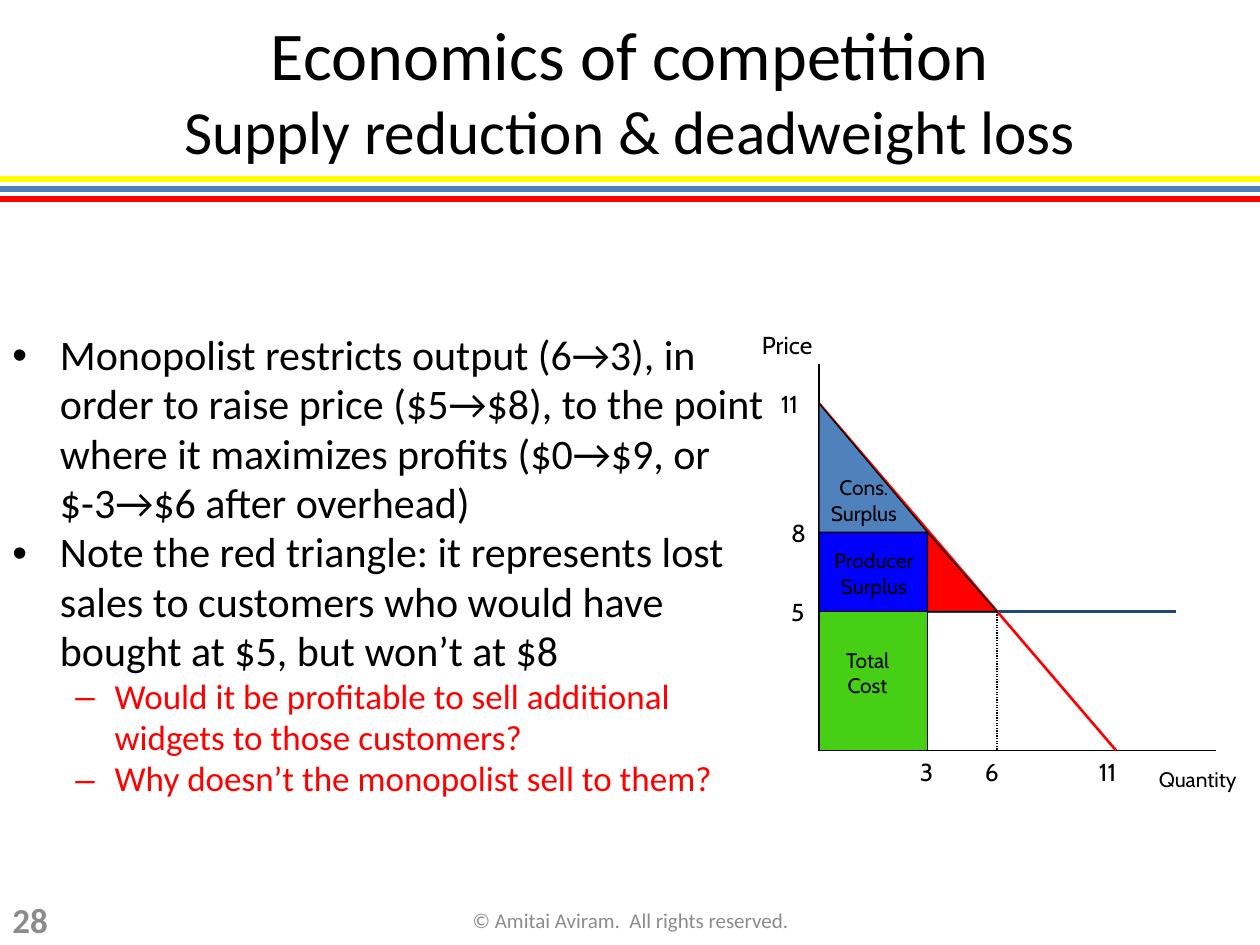
"""Build the slide on supply reduction and deadweight loss."""
from lxml.etree import SubElement
from pptx import Presentation
from pptx.dml.color import RGBColor
from pptx.enum.dml import MSO_LINE
from pptx.enum.shapes import MSO_CONNECTOR, MSO_SHAPE
from pptx.enum.text import MSO_ANCHOR, PP_ALIGN
from pptx.oxml.ns import qn
from pptx.util import Cm, Pt

BLACK = RGBColor(0x00, 0x00, 0x00)
RED = RGBColor(0xFF, 0x00, 0x00)
YELLOW = RGBColor(0xFF, 0xFF, 0x00)
STEEL = RGBColor(0x4B, 0x7E, 0xBC)
NAVY = RGBColor(0x1F, 0x49, 0x7D)
SKY = RGBColor(0x4F, 0x81, 0xBD)
BLUE = RGBColor(0x00, 0x00, 0xFF)
GREEN = RGBColor(0x46, 0xCF, 0x15)
GRAY = RGBColor(0x8C, 0x8C, 0x8C)

WIDTH, HEIGHT = 25.4, 19.05
TITLE_LINES = [("Economics of competition", 39), ("Supply reduction & deadweight loss", 35)]
RULES = [(3.61, YELLOW), (3.81, STEEL), (4.01, RED)]
POINTS = [
    (0, "Monopolist restricts output (6→3), in order to raise price ($5→$8), to the point "
        "where it maximizes profits ($0→$9, or $-3→$6 after overhead)"),
    (0, "Note the red triangle: it represents lost sales to customers who would have "
        "bought at $5, but won’t at $8"),
    (1, "Would it be profitable to sell additional widgets to those customers?"),
    (1, "Why doesn’t the monopolist sell to them?"),
]
LEVELS = [
    {"bullet": "•", "left": 0.96, "hang": 0.96, "size": 24, "color": BLACK},
    {"bullet": "–", "left": 2.06, "hang": 0.79, "size": 20, "color": RED},
]

QUANTITY = {0: 16.51, 3: 18.7, 6: 20.1, 11: 22.5}
PRICE = {0: 15.13, 5: 12.33, 8: 10.73, 11: 8.13}
AXIS_TOP, AXIS_RIGHT, COST_RIGHT = 7.34, 24.51, 23.7
LABEL_HEIGHT = 0.84
PRICE_TICKS = [(5, 15.7, 0.81), (8, 15.7, 0.81), (11, 15.49, 1.19)]
QUANTITY_TICKS = [(3, 0.81), (6, 0.99), (11, 1.19)]
AXIS_NAMES = [("Price", (15.11, 6.53, 1.6, LABEL_HEIGHT), 14),
              ("Quantity", (23.11, 15.32, 2.21, 0.76), 12)]
AREAS = [
    (MSO_SHAPE.RECTANGLE, (0, 3), (8, 5), BLUE, "Producer Surplus", (16.51, 10.92, 2.21, 1.27)),
    (MSO_SHAPE.RECTANGLE, (0, 3), (5, 0), GREEN, "Total Cost", (16.69, 12.93, 1.6, 1.27)),
    (MSO_SHAPE.RIGHT_TRIANGLE, (3, 6), (8, 5), RED, None, None),
    (MSO_SHAPE.RIGHT_TRIANGLE, (0, 3), (11, 8), SKY, "Cons. Surplus", (16.31, 9.45, 2.21, 1.27)),
]
FOOTERS = [
    ("© Amitai Aviram.  All rights reserved.", (8.69, 18.03, 8.05, 1.02),
     {"size": Pt(12)}, PP_ALIGN.CENTER),
    ("28", (0, 18.03, 1.7, 1.02), {"size": Pt(20), "bold": True}, PP_ALIGN.LEFT),
]


def apply_format(target, settings):
    for key, value in settings.items():
        setattr(target, key, value)


def add_run(paragraph, wording, color=BLACK, **settings):
    run = paragraph.add_run()
    run.text = wording
    apply_format(run.font, {"name": "Calibri", **settings})
    run.font.color.rgb = color


def add_box(slide, box, **settings):
    frame = slide.shapes.add_textbox(*map(Cm, box)).text_frame
    apply_format(frame, {"word_wrap": True, **settings})
    return frame


def add_label(slide, wording, box, size=14, align=PP_ALIGN.LEFT, wrap=False):
    paragraph = add_box(slide, box, word_wrap=wrap).paragraphs[0]
    paragraph.alignment = align
    add_run(paragraph, wording, name="Cabin", size=Pt(size))


def add_line(slide, start, end, color=BLACK, width=0.75, dash=None):
    connector = slide.shapes.add_connector(MSO_CONNECTOR.STRAIGHT, *map(Cm, start + end))
    apply_format(connector.line, {"width": Pt(width), "dash_style": dash})
    connector.line.color.rgb = color
    SubElement(connector._element.spPr, qn("a:effectLst"))


def add_heading(slide):
    title = slide.shapes.title
    apply_format(title, {"left": 0, "top": 0, "width": Cm(WIDTH), "height": Cm(RULES[0][0])})
    title.text_frame.vertical_anchor = MSO_ANCHOR.MIDDLE
    paragraph = title.text_frame.paragraphs[0]
    paragraph.alignment = PP_ALIGN.CENTER
    for index, (wording, size) in enumerate(TITLE_LINES):
        if index:
            paragraph.add_line_break()
        add_run(paragraph, wording, size=Pt(size))
    for y, color in RULES:
        add_line(slide, (0, y), (WIDTH, y), color, 3)


def add_points(slide):
    frame = add_box(slide, (0, 4.01, 15.9, 14.4), margin_top=Cm(2.66))
    for index, (level, wording) in enumerate(POINTS):
        style = LEVELS[level]
        paragraph = frame.add_paragraph() if index else frame.paragraphs[0]
        apply_format(paragraph, {"level": level, "line_spacing": 0.98, "space_before": Pt(0)})
        add_run(paragraph, wording, style["color"], size=Pt(style["size"]))
        properties = paragraph._p.get_or_add_pPr()
        properties.set("marL", str(Cm(style["left"])))
        properties.set("indent", str(-Cm(style["hang"])))
        SubElement(properties, qn("a:buFont"), typeface="Arial")
        SubElement(properties, qn("a:buChar"), char=style["bullet"])


def add_graph(slide):
    left, bottom = QUANTITY[0], PRICE[0]
    add_line(slide, (left, AXIS_TOP), (left, bottom))
    add_line(slide, (left, bottom), (AXIS_RIGHT, bottom))
    add_line(slide, (left, PRICE[5]), (COST_RIGHT, PRICE[5]), NAVY, 1.5)
    add_line(slide, (left, PRICE[11]), (QUANTITY[11], bottom), RED, 1.5)
    corner = (QUANTITY[3], PRICE[8])
    for start, end in [((QUANTITY[6], PRICE[5]), (QUANTITY[6], bottom)),
                       ((QUANTITY[3], bottom), corner),
                       (corner, (left, PRICE[8]))]:
        add_line(slide, start, end, dash=MSO_LINE.ROUND_DOT)
    for wording, box, size in AXIS_NAMES:
        add_label(slide, wording, box, size)
    for price, x, width in PRICE_TICKS:
        add_label(slide, str(price), (x, PRICE[price] - LABEL_HEIGHT / 2, width, LABEL_HEIGHT))
    for quantity, width in QUANTITY_TICKS:
        add_label(slide, str(quantity),
                  (QUANTITY[quantity] - width / 2, bottom, width, LABEL_HEIGHT))
    for preset, (q1, q2), (high, low), color, wording, box in AREAS:
        x, y = QUANTITY[q1], PRICE[high]
        area = slide.shapes.add_shape(
            preset, *map(Cm, (x, y, QUANTITY[q2] - x, PRICE[low] - y)))
        area.shadow.inherit = False
        area.fill.solid()
        area.fill.fore_color.rgb = color
        area.line.color.rgb = BLACK
        area.line.width = Pt(0.75)
        if wording:
            add_label(slide, wording, box, 12, PP_ALIGN.CENTER, True)


def main():
    deck = Presentation()
    apply_format(deck, {"slide_width": Cm(WIDTH), "slide_height": Cm(HEIGHT)})
    slide = deck.slides.add_slide(deck.slide_layouts[5])
    add_heading(slide)
    add_points(slide)
    add_graph(slide)
    for wording, box, settings, align in FOOTERS:
        paragraph = add_box(slide, box, vertical_anchor=MSO_ANCHOR.MIDDLE).paragraphs[0]
        paragraph.alignment = align
        add_run(paragraph, wording, GRAY, **settings)
    deck.save("out.pptx")


if __name__ == "__main__":
    main()
